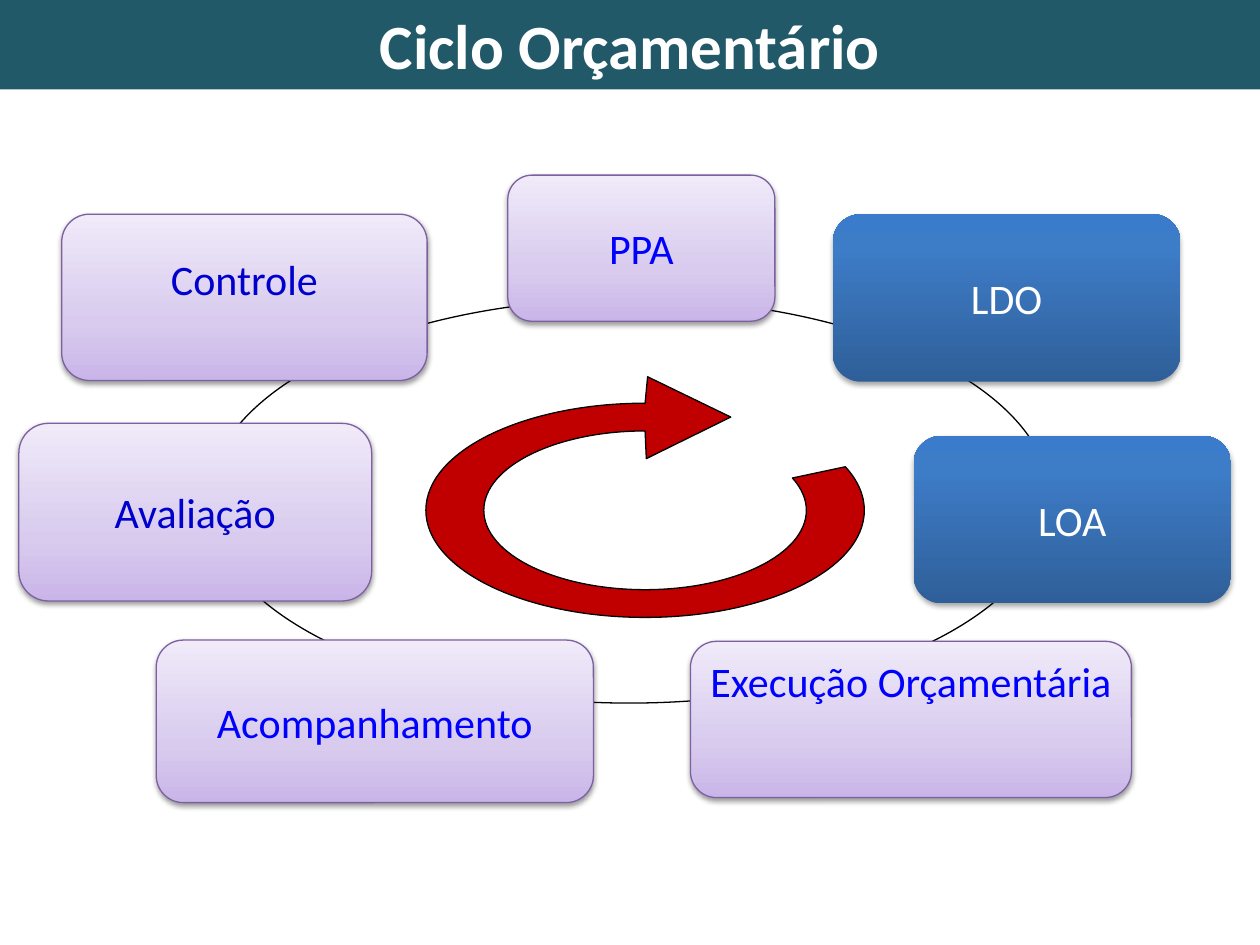
from dataclasses import dataclass
from math import cos, radians, sin, tan

from lxml.etree import SubElement
from pptx import Presentation
from pptx.dml.color import RGBColor
from pptx.enum.shapes import MSO_SHAPE
from pptx.enum.text import MSO_ANCHOR, MSO_AUTO_SIZE, PP_ALIGN
from pptx.oxml.ns import qn
from pptx.util import Inches, Pt

Point = tuple[float, float]


@dataclass(frozen=True)
class Style:
    stops: tuple[tuple[int, str], ...]  # percent, colour; from bottom to top
    outline: str | None
    shadow_alpha: int
    shadow_distance: float


@dataclass(frozen=True)
class Stage:
    label: str
    left: float
    top: float
    width: float
    height: float
    style: Style
    text_color: str
    anchor: MSO_ANCHOR = MSO_ANCHOR.MIDDLE
    bottom_margin: float = 0.05


LILAC = Style(((0, "C9B5E8"), (35, "D8CBEE"), (100, "F0EAF9")), "7D60A0", 38, 1.6)
BLUE = Style(((0, "2F5F99"), (80, "3D7CC7"), (100, "3A7CCB")), None, 35, 1.8)

STAGES = [
    Stage("Acompanhamento", 1.24, 5.08, 3.47, 1.29, LILAC, "0000FF"),
    Stage("Execução Orçamentária", 5.48, 5.09, 3.5, 1.24, LILAC, "0000FF", MSO_ANCHOR.TOP),
    Stage("LOA", 7.25, 3.46, 2.52, 1.33, BLUE, "FFFFFF"),
    Stage("LDO", 6.61, 1.7, 2.76, 1.33, BLUE, "FFFFFF"),
    Stage("PPA", 4.03, 1.39, 2.12, 1.16, LILAC, "0000FF"),
    Stage("Controle", 0.49, 1.7, 2.9, 1.32, LILAC, "0000CC", bottom_margin=0.35),
    Stage("Avaliação", 0.15, 3.36, 2.8, 1.41, LILAC, "0000CC"),
]


def rgb(color: str) -> RGBColor:
    return RGBColor.from_string(color)


def set_outline(shape, color: str) -> None:
    shape.line.color.rgb = rgb(color)
    shape.line.width = Pt(0.75)


def write_text(shape, text: str, size: int, color: str, bold: bool = False) -> None:
    paragraph = shape.text_frame.paragraphs[0]
    paragraph.alignment = PP_ALIGN.CENTER
    run = paragraph.add_run()
    run.text = text
    run.font.name = "Calibri"
    run.font.size = Pt(size)
    run.font.bold = bold
    run.font.color.rgb = rgb(color)


def add_color(parent, color: str):
    return SubElement(parent, qn("a:srgbClr"), val=color)


def apply_style(shape, style: Style) -> None:
    shape.fill.gradient()
    shape.fill.gradient_angle = 90
    stop_list = shape.element.spPr.find(".//" + qn("a:gsLst"))
    for stop in list(stop_list):
        stop_list.remove(stop)
    for percent, color in style.stops:
        add_color(SubElement(stop_list, qn("a:gs"), pos=str(percent * 1000)), color)

    if style.outline:
        set_outline(shape, style.outline)
    else:
        shape.line.fill.background()

    shape.shadow.inherit = False
    effects = shape.element.spPr.find(qn("a:effectLst"))
    shadow = SubElement(effects, qn("a:outerShdw"), blurRad=str(Pt(3.1)),
                        dist=str(Pt(style.shadow_distance)), dir="5400000",
                        rotWithShape="0")
    SubElement(add_color(shadow, "000000"), qn("a:alpha"),
               val=str(style.shadow_alpha * 1000))


def add_stage(slide, stage: Stage) -> None:
    box = slide.shapes.add_shape(
        MSO_SHAPE.ROUNDED_RECTANGLE, Inches(stage.left), Inches(stage.top),
        Inches(stage.width), Inches(stage.height))
    apply_style(box, stage.style)
    frame = box.text_frame
    frame.word_wrap = True
    frame.vertical_anchor = stage.anchor
    frame.margin_left = frame.margin_right = Inches(0.05)
    frame.margin_bottom = Inches(stage.bottom_margin)
    write_text(box, stage.label, 24, stage.text_color)


def arc(radius_x: float, radius_y: float) -> list[Point]:
    """Bézier points from the top, leftwards round to the open end of the ring."""
    def place(x: float, y: float) -> Point:
        return 5.12 + radius_x * x, 4.05 - radius_y * y

    angles = [radians(angle) for angle in (90, 180, 270, 360, 384)]
    points = [place(0, 1)]
    for start, end in zip(angles, angles[1:]):
        pull = 4 / 3 * tan((end - start) / 4)
        points += [
            place(cos(start) - pull * sin(start), sin(start) + pull * cos(start)),
            place(cos(end) + pull * sin(end), sin(end) - pull * cos(end)),
            place(cos(end), sin(end)),
        ]
    return points


def bend(lines: list) -> None:
    """Turn each three consecutive line segments into one cubic curve."""
    for first in range(0, len(lines), 3):
        group = lines[first:first + 3]
        curve = group[0].makeelement(qn("a:cubicBezTo"))
        group[0].addprevious(curve)
        for line in group:
            curve.append(line[0])
            line.getparent().remove(line)


def add_cycle_arrow(slide) -> None:
    inner, outer = arc(1.28, 0.63), arc(1.74, 0.85)
    head = [(5.14, 2.99), (5.8, 3.31), (5.13, 3.64)]
    points = [(Inches(x), Inches(y)) for x, y in inner + outer[::-1] + head]
    builder = slide.shapes.build_freeform(*points[0])
    builder.add_line_segments(points[1:], close=True)
    arrow = builder.convert_to_shape()
    lines = list(arrow.element.spPr.iter(qn("a:lnTo")))
    bend(lines[:len(inner) - 1])
    bend(lines[len(inner):len(inner) + len(outer) - 1])
    arrow.shadow.inherit = False
    arrow.fill.solid()
    arrow.fill.fore_color.rgb = rgb("C00000")
    set_outline(arrow, "000000")


def add_title(slide) -> None:
    title = slide.shapes.title
    title.left, title.top = Inches(0), Inches(0)
    title.width, title.height = Inches(10), Inches(0.71)
    title.fill.solid()
    title.fill.fore_color.rgb = rgb("215968")
    title.text_frame.auto_size = MSO_AUTO_SIZE.NONE
    title.text_frame.vertical_anchor = MSO_ANCHOR.MIDDLE
    write_text(title, "Ciclo Orçamentário", 36, "FFFFFF", bold=True)


def main() -> None:
    presentation = Presentation()
    presentation.slide_width, presentation.slide_height = Inches(10), Inches(7.5)
    slide = presentation.slides.add_slide(presentation.slide_layouts[5])
    add_title(slide)

    # Orbit behind the stages
    orbit = slide.shapes.add_shape(
        MSO_SHAPE.OVAL, Inches(1.65), Inches(2.37), Inches(6.69), Inches(3.21))
    orbit.shadow.inherit = False
    orbit.fill.background()
    set_outline(orbit, "000000")

    # Stages and the central arrow
    for stage in STAGES:
        add_stage(slide, stage)
    add_cycle_arrow(slide)

    presentation.save("out.pptx")


if __name__ == "__main__":
    main()
